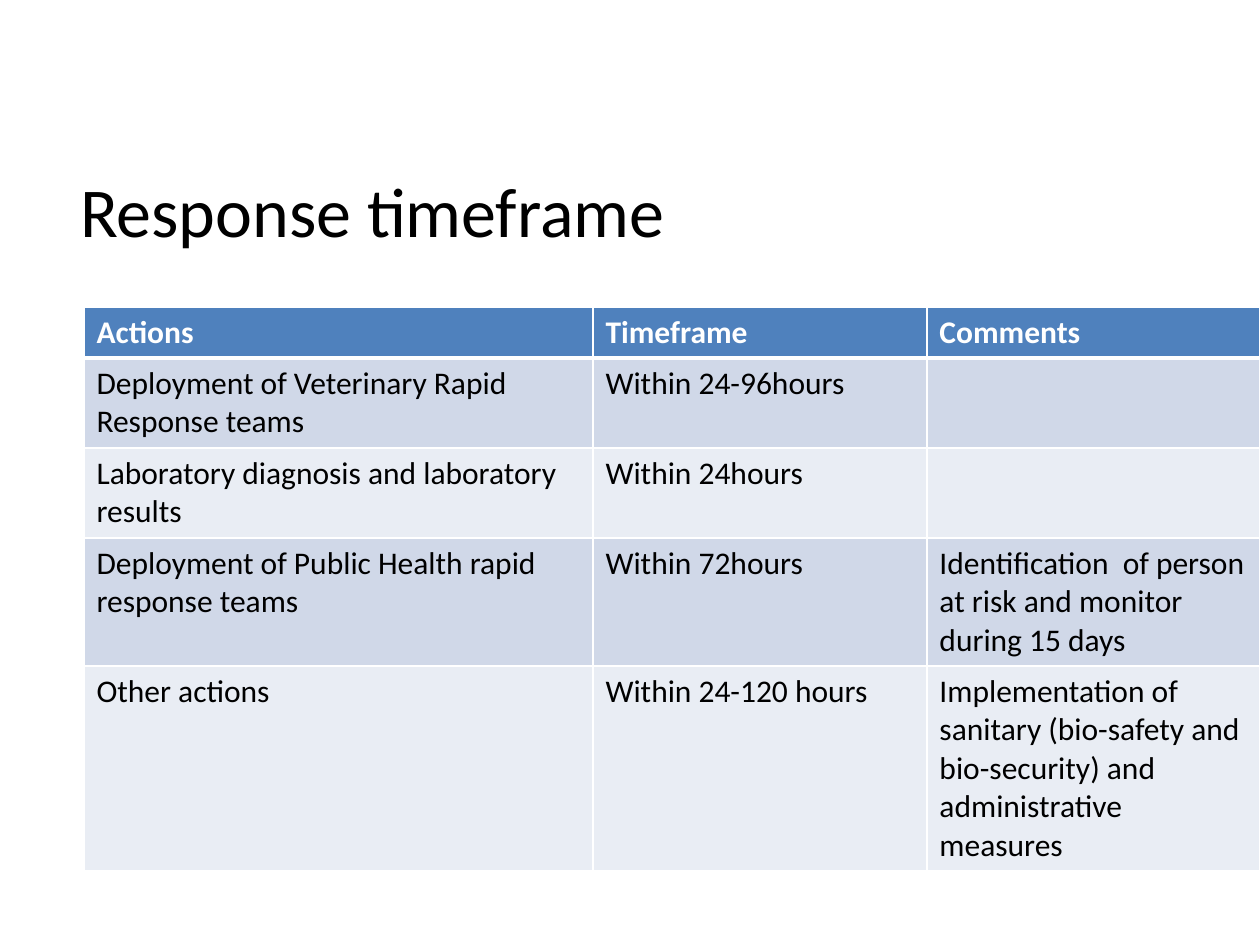
from typing import NamedTuple

from lxml.etree import SubElement
from pptx import Presentation
from pptx.dml.color import RGBColor
from pptx.enum.text import MSO_ANCHOR, PP_ALIGN
from pptx.oxml.ns import qn
from pptx.util import Emu, Pt

EMU_PER_PX = 914400 // 126
COLORS = {
    "white": "FFFFFF",
    "black": "000000",
    "header": "4F81BD",
    "band_dark": "D0D8E8",
    "band_light": "E9EDF4",
}
COLUMN_WIDTHS = (509, 334, 333)


class ActionRow(NamedTuple):
    height: int
    action: str
    timeframe: str
    comment: str = ""


HEADER = ActionRow(50, "Actions", "Timeframe", "Comments")
ACTIONS = (
    ActionRow(90, "Deployment of Veterinary Rapid Response teams", "Within 24-96hours"),
    ActionRow(90, "Laboratory diagnosis and laboratory results", "Within 24hours"),
    ActionRow(128, "Deployment of Public Health rapid response teams", "Within 72hours",
              "Identification  of person at risk and monitor during 15 days"),
    ActionRow(204, "Other actions", "Within 24-120 hours",
              "Implementation of sanitary (bio-safety and bio-security) "
              "and administrative measures"),
)


def px(length: int) -> Emu:
    return Emu(length * EMU_PER_PX)


def rgb(color: str) -> RGBColor:
    return RGBColor.from_string(COLORS[color])


def write_text(frame, text: str, *, size: int, color: str = "black", bold: bool = False) -> None:
    paragraph = frame.paragraphs[0]
    paragraph.alignment = PP_ALIGN.LEFT
    paragraph.font.size = Pt(size)
    if text:
        run = paragraph.add_run()
        run.text = text
        run.font.name = "Calibri"
        run.font.size = Pt(size)
        run.font.bold = bold
        run.font.color.rgb = rgb(color)


def add_borders(cell, bottom: int, top: int) -> None:
    properties = cell._tc.get_or_add_tcPr()
    for side, width in (("L", 1), ("R", 1), ("T", top), ("B", bottom)):
        line = SubElement(properties, qn(f"a:ln{side}"), w=str(Pt(width)))
        fill = SubElement(line, qn("a:solidFill"))
        SubElement(fill, qn("a:srgbClr"), val=COLORS["white"])


def fill_row(table, index: int, row: ActionRow) -> None:
    is_header = index == 0
    background = "header" if is_header else ("band_light", "band_dark")[index % 2]
    table.rows[index].height = px(row.height)
    for column, text in enumerate((row.action, row.timeframe, row.comment)):
        cell = table.cell(index, column)
        add_borders(cell, bottom=3 if is_header else 1, top=3 if index == 1 else 1)
        cell.fill.solid()
        cell.fill.fore_color.rgb = rgb(background)
        write_text(cell.text_frame, text, size=18, bold=is_header,
                   color="white" if is_header else "black")


def add_title(slide, text: str) -> None:
    title = slide.shapes.title
    title.left, title.top, title.width, title.height = map(px, (73, 157, 1134, 95))
    frame = title.text_frame
    frame.word_wrap = True
    frame.vertical_anchor = MSO_ANCHOR.BOTTOM
    frame.margin_left = px(7)
    frame.margin_bottom = 0
    write_text(frame, text, size=40)


def add_timeframe_table(slide) -> None:
    rows = (HEADER, *ACTIONS)
    table = slide.shapes.add_table(
        len(rows), len(COLUMN_WIDTHS), px(84), px(307),
        px(sum(COLUMN_WIDTHS)), px(sum(row.height for row in rows))).table
    for column, width in zip(table.columns, COLUMN_WIDTHS):
        column.width = px(width)
    for index, row in enumerate(rows):
        fill_row(table, index, row)


def main() -> None:
    presentation = Presentation()
    presentation.slide_width, presentation.slide_height = px(1260), px(945)
    slide = presentation.slides.add_slide(presentation.slide_layouts[5])
    add_title(slide, "Response timeframe")
    add_timeframe_table(slide)
    presentation.save("out.pptx")


if __name__ == "__main__":
    main()
